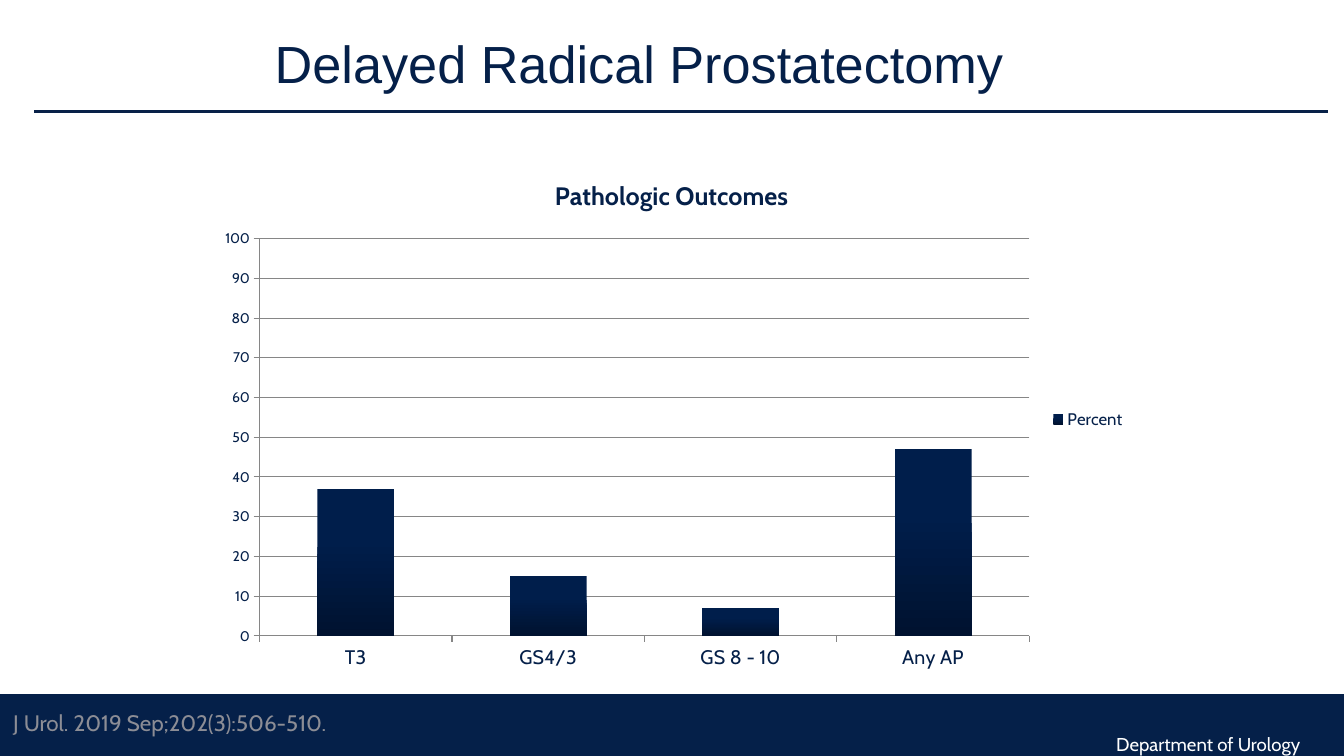
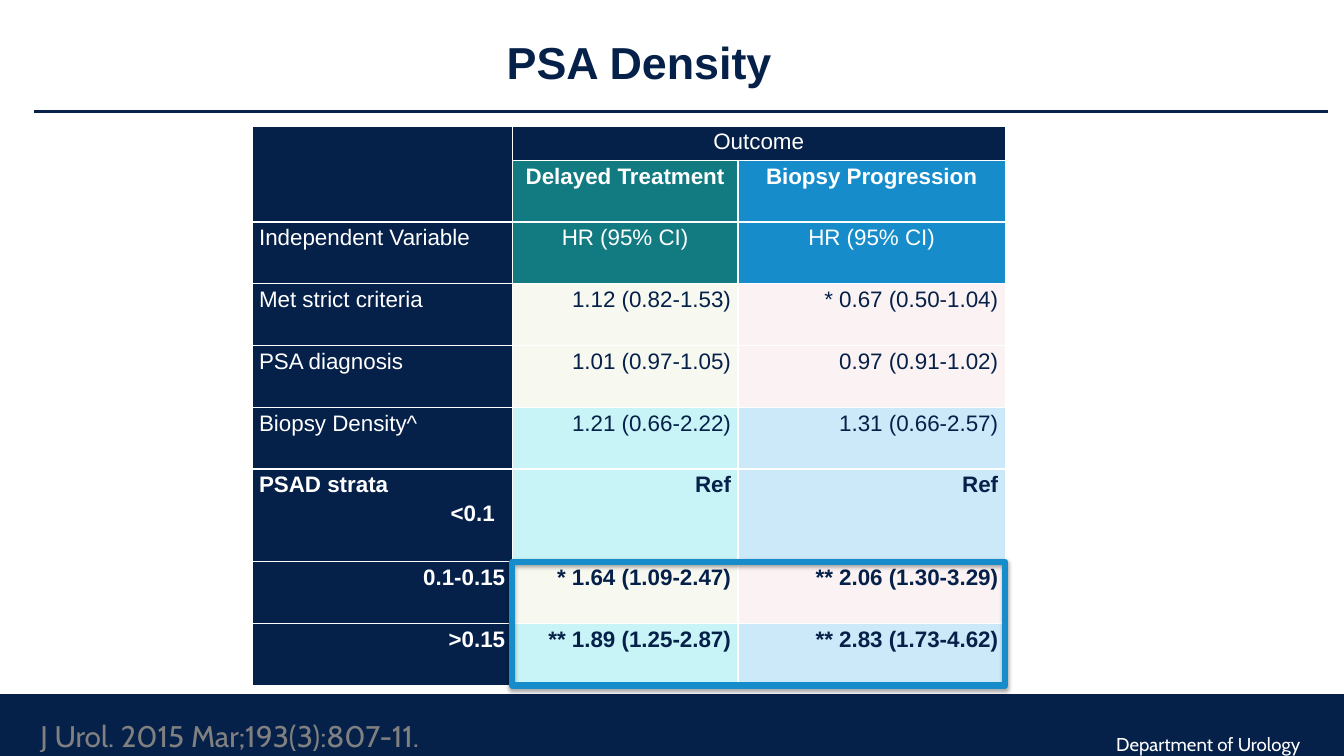
"""Build two urology slides: a column chart and a hazard ratio table."""
from lxml.etree import SubElement
from pptx import Presentation
from pptx.chart.data import CategoryChartData
from pptx.dml.color import RGBColor
from pptx.enum.chart import XL_CHART_TYPE, XL_LEGEND_POSITION, XL_TICK_MARK
from pptx.enum.shapes import MSO_CONNECTOR, MSO_SHAPE
from pptx.enum.text import MSO_ANCHOR, PP_ALIGN
from pptx.oxml.ns import qn
from pptx.util import Inches, Pt

NAVY, WHITE, GRAY = "052049", "FFFFFF", "868686"
TEAL, BLUE = "127A81", "178CCB"
HEAD, WARM, COOL = (TEAL, BLUE), ("F7F9F1", "FBF3F3"), ("C8F4F7", "CCE9F9")
LEFT, CENTER, RIGHT = PP_ALIGN.LEFT, PP_ALIGN.CENTER, PP_ALIGN.RIGHT
MARGINS = ("margin_left", "margin_top", "margin_right", "margin_bottom")


def rgb(color):
    return RGBColor.from_string(color)


def apply(obj, values):
    for name, value in values.items():
        setattr(obj, name, value)


def set_font(font, size, color=NAVY, name="Arial", bold=False):
    apply(font, {"size": Pt(size), "name": name, "bold": bold})
    font.color.rgb = rgb(color)


def set_line(line, color, width):
    line.color.rgb = rgb(color)
    line.width = Pt(width)


def set_fill(fill, color):
    fill.solid()
    fill.fore_color.rgb = rgb(color)


def add_xml(parent, tag, **attrs):
    return SubElement(parent, qn(tag), {k: str(v) for k, v in attrs.items()})


class Deck:
    def __init__(self):
        self.prs = Presentation()
        apply(self.prs, {"slide_width": Inches(13.33), "slide_height": Inches(7.5)})
        self.s = None

    def slide(self, title, y, size, bold=False):
        self.s = self.prs.slides.add_slide(self.prs.slide_layouts[6])
        band = self.rect(0, 6.9, 13.33, 0.6, NAVY, 1.5)
        set_fill(band.fill, NAVY)
        self.text("Department of Urology", 10.94, 7.2, 2.12, 0.36, 13.3, WHITE,
                  "Cabin", ins=(0.13, 0.07), wrap=False)
        self.rule(0.34, 1.11, 13.17)
        self.text(title, 0.44, y, 11.8, 0.6, size, bold=bold, align=CENTER)

    def rect(self, x, y, w, h, color, width):
        sp = self.s.shapes.add_shape(MSO_SHAPE.RECTANGLE, Inches(x), Inches(y),
                                     Inches(w), Inches(h))
        sp.shadow.inherit = False
        sp.fill.background()
        set_line(sp.line, color, width)
        return sp

    def highlight(self, x, y, w, h):
        sp = self.rect(x, y, w, h, BLUE, 4.5)
        effects = sp._element.spPr.find(qn("a:effectLst"))
        shadow = add_xml(effects, "a:outerShdw", blurRad=Pt(3.1), dist=Pt(1.8),
                         dir=5400000, rotWithShape=0)
        add_xml(add_xml(shadow, "a:srgbClr", val="000000"), "a:alpha", val=35000)

    def rule(self, x, y, x2):
        cn = self.s.shapes.add_connector(MSO_CONNECTOR.STRAIGHT, Inches(x), Inches(y),
                                         Inches(x2), Inches(y))
        set_line(cn.line, "082148", 2.25)
        add_xml(cn._element.spPr, "a:effectLst")

    def text(self, text, x, y, w, h, size, color=NAVY, name="Arial", bold=False,
             align=LEFT, ins=(0.1, 0.05), wrap=True, anchor=MSO_ANCHOR.TOP):
        tf = self.s.shapes.add_textbox(Inches(x), Inches(y), Inches(w),
                                       Inches(h)).text_frame
        apply(tf, {"word_wrap": wrap, "vertical_anchor": anchor})
        apply(tf, {m: Inches(v) for m, v in zip(MARGINS, ins * 2)})
        p = tf.paragraphs[0]
        p.alignment = align
        r = p.add_run()
        r.text = text
        set_font(r.font, size, color, name, bold)

    def chart(self, title, series, cats, vals, x, y, w, h):
        data = CategoryChartData()
        data.categories = cats
        data.add_series(series, vals)
        chart = self.s.shapes.add_chart(XL_CHART_TYPE.COLUMN_CLUSTERED, Inches(x),
                                        Inches(y), Inches(w), Inches(h), data).chart
        set_font(chart.font, 10, name="Cabin")
        apply(chart, {"has_title": True, "has_legend": True})
        tf = chart.chart_title.text_frame
        tf.text = title
        set_font(tf.paragraphs[0].runs[0].font, 18, name="Cabin", bold=True)
        apply(chart.legend, {"position": XL_LEGEND_POSITION.RIGHT,
                             "include_in_layout": False})
        set_font(chart.legend.font, 12, name="Cabin")
        plot = chart.plots[0]
        apply(plot, {"gap_width": 150, "vary_by_categories": False})
        fill = plot.series[0].format.fill
        fill.gradient()
        fill.gradient_angle = 270
        stops = (("001E4B", 0.35), ("001230", 1))
        for stop, (color, position) in zip(fill.gradient_stops, stops):
            stop.color.rgb = rgb(color)
            stop.position = position
        val, cat = chart.value_axis, chart.category_axis
        apply(val, {"minimum_scale": 0, "maximum_scale": 100, "major_unit": 10,
                    "has_major_gridlines": True})
        set_line(val.major_gridlines.format.line, GRAY, 0.75)
        for axis, size in ((val, 10), (cat, 14)):
            axis.major_tick_mark = XL_TICK_MARK.OUTSIDE
            set_line(axis.format.line, GRAY, 0.75)
            set_font(axis.tick_labels.font, size, name="Cabin")

    def cell(self, cell, text, fill, color, align=LEFT, bold=False):
        apply(cell, dict(zip(MARGINS, (Inches(0.07), 0) * 2)))
        set_fill(cell.fill, fill)
        tcPr = cell._tc.get_or_add_tcPr()
        for i, side in enumerate("LRTB"):
            ln = add_xml(tcPr, f"a:ln{side}", w=Pt(1))
            add_xml(add_xml(ln, "a:solidFill"), "a:srgbClr", val=WHITE)
            tcPr.insert(i, ln)
        cell.text = text
        for p in cell.text_frame.paragraphs:
            apply(p, {"alignment": align, "line_spacing": 1.15})
            set_font(p.font, 16, color, bold=bold)
            for r in p.runs:
                set_font(r.font, 16, color, bold=bold)

    def table(self, rows, cols, heights, x, y):
        tbl = self.s.shapes.add_table(len(rows), len(cols), Inches(x), Inches(y),
                                      Inches(sum(cols)), Inches(sum(heights))).table
        for col, width in zip(tbl.columns, cols):
            col.width = Inches(width)
        for i, (texts, fills, label_align, bold) in enumerate(rows):
            tbl.rows[i].height = Inches(heights[i])
            light = fills in (WARM, COOL)
            for j, text in enumerate(texts):
                self.cell(tbl.cell(i, j), text, (NAVY, *fills)[j],
                          NAVY if j and light else WHITE,
                          label_align if j == 0 else RIGHT if light else CENTER,
                          bold)
        return tbl


def main():
    deck = Deck()
    deck.slide("Delayed Radical Prostatectomy", 0.26, 37.3)
    deck.text("J Urol. 2019 Sep;202(3):506-510.", 0, 6.97, 10.43, 0.39, 16, "8C8D95",
              "Cabin", ins=(0.13, 0.07), anchor=MSO_ANCHOR.MIDDLE)
    deck.chart("Pathologic Outcomes", "Percent", ("T3", "GS4/3", "GS 8 - 10", "Any AP"),
               (37, 15, 7, 47), 2.05, 1.57, 9.22, 5.18)

    deck.slide("PSA Density", 0.3, 32, bold=True)
    rows = [
        (("", "Outcome", ""), (NAVY, NAVY), LEFT, False),
        (("", "Delayed Treatment", "Biopsy Progression"), HEAD, LEFT, True),
        (("Independent Variable", "HR (95% CI)", "HR (95% CI)"), HEAD, LEFT, False),
        (("Met strict criteria", "1.12 (0.82-1.53)", "* 0.67 (0.50-1.04)"),
         WARM, LEFT, False),
        (("PSA diagnosis", "1.01 (0.97-1.05)", "0.97 (0.91-1.02)"), WARM, LEFT, False),
        (("Biopsy Density^", "1.21 (0.66-2.22)", "1.31 (0.66-2.57)"), COOL, LEFT, False),
        (("PSAD strata\n<0.1", "Ref", "Ref"), COOL, LEFT, True),
        (("0.1-0.15", "* 1.64 (1.09-2.47)", "** 2.06 (1.30-3.29)"), WARM, RIGHT, True),
        ((">0.15", "** 1.89 (1.25-2.87)", "** 2.83 (1.73-4.62)"), COOL, RIGHT, True),
    ]
    x, y, cols = 2.5, 1.25, (2.58, 2.24, 2.65)
    top, strata, total = 0.34, 0.92, 5.55
    heights = [(total - top - strata) / 7] * len(rows)
    heights[0], heights[6] = top, strata
    tbl = deck.table(rows, cols, heights, x, y)
    tbl.cell(0, 0).merge(tbl.cell(1, 0))
    tbl.cell(0, 1).merge(tbl.cell(0, 2))
    indented = tbl.cell(6, 0).text_frame.paragraphs[1]
    indented._p.get_or_add_pPr().set("marL", str(Inches(1.9)))
    deck.text("J Urol. 2015 Mar;193(3):807-11.", 0.4, 7.12, 3.86, 0.36, 21.3, "808080",
              "Cabin", ins=(0, 0), wrap=False)
    deck.highlight(x + cols[0], y + sum(heights[:7]), sum(cols[1:]), sum(heights[7:]))
    deck.prs.save("out.pptx")


if __name__ == "__main__":
    main()
